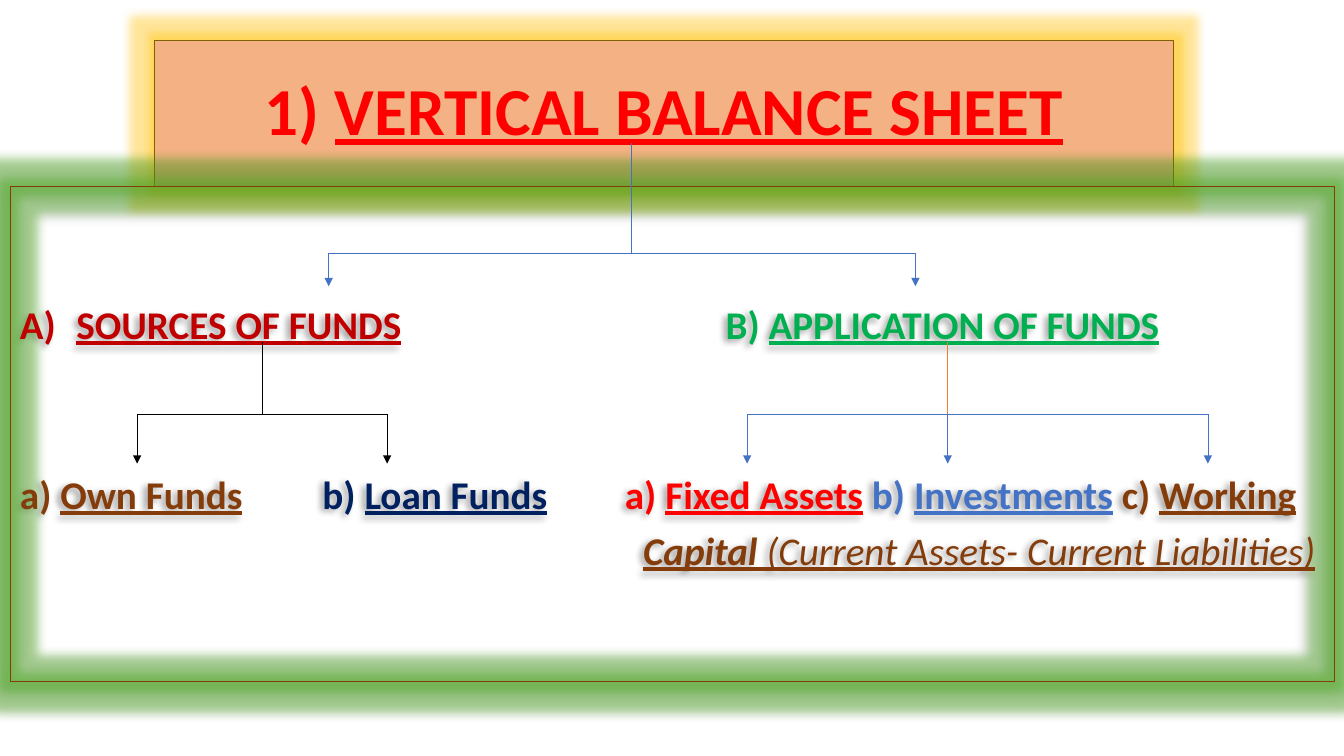
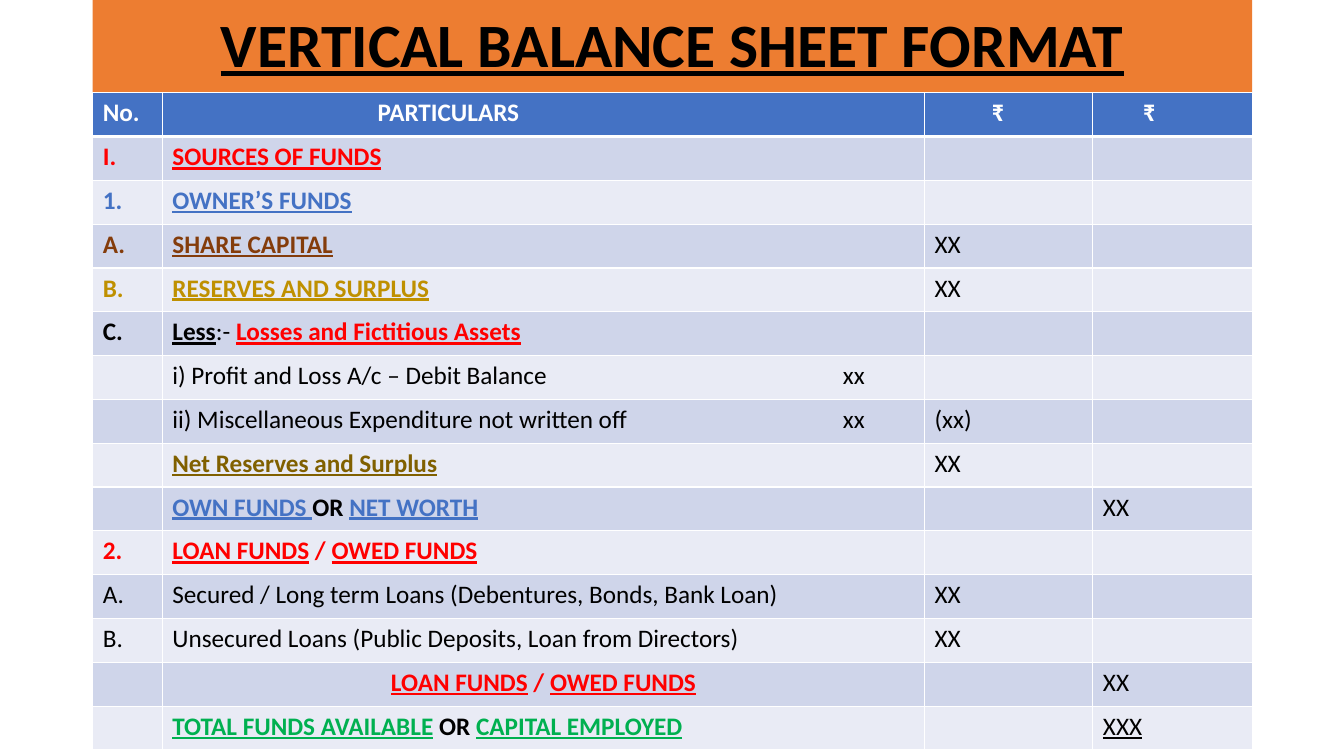
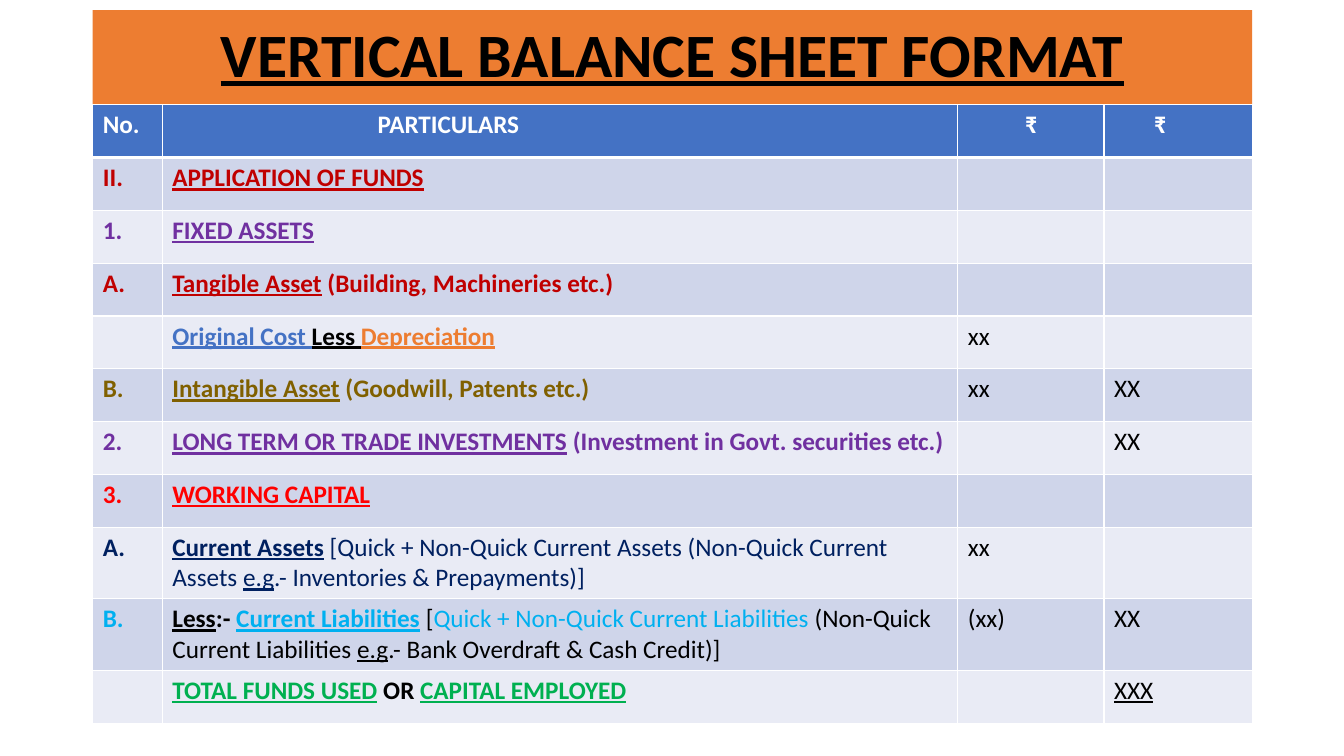
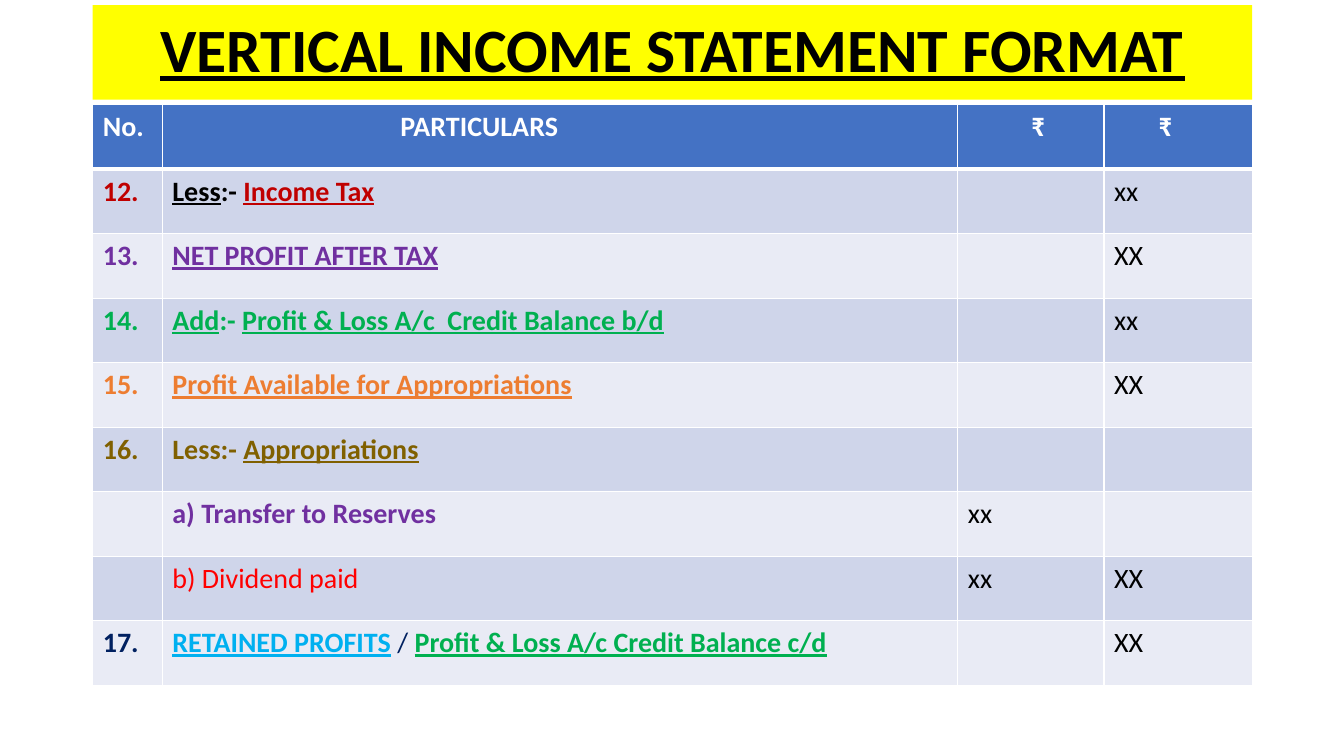
import dataclasses

import lxml.etree
import pptx
import pptx.dml.color
import pptx.enum.shapes
import pptx.enum.text
import pptx.oxml.ns
import pptx.util

EMU_PER_PX = 9144  # 100 px to the inch


@dataclasses.dataclass(frozen=True)
class Theme:
    font: str = "Calibri"
    black: str = "000000"
    white: str = "FFFFFF"
    red: str = "FF0000"
    crimson: str = "C00000"
    green: str = "00B050"
    blue: str = "4472C4"
    sky: str = "00B0F0"
    navy: str = "002060"
    purple: str = "7030A0"
    orange: str = "ED7D31"
    peach: str = "F4B183"
    yellow: str = "FFFF00"
    gold: str = "BF9000"
    olive: str = "806000"
    brown: str = "843C0B"
    yellow_glow: str = "FFC000"
    green_glow: str = "4EB21E"
    bands: tuple = ("CFD5EA", "E9EBF5")
    cover_size: int = 48
    title_size: int = 44
    chart_size: int = 28
    table_size: int = 18
    large_table_size: int = 20
    line_spacing: float = 0.9


THEME = Theme()


@dataclasses.dataclass(frozen=True)
class Span:
    text: str
    colour: str = THEME.black
    bold: bool = False
    underline: bool = False
    italic: bool = False


def strong(text, colour=THEME.black):
    return Span(text, colour, bold=True)


def under(text, colour=THEME.black):
    return Span(text, colour, bold=True, underline=True)


def px(length):
    return pptx.util.Emu(round(length * EMU_PER_PX))


def rgb(colour):
    return pptx.dml.color.RGBColor.from_string(colour)


def add_xml(parent, tag, **attributes):
    element = lxml.etree.SubElement(parent, pptx.oxml.ns.qn(tag))
    for name, value in attributes.items():
        element.set(name, str(value))
    return element


def add_spans(para, spans, size):
    for item in spans:
        span = para.add_run()
        span.text = item.text
        font = span.font
        font.name = THEME.font
        font.size = pptx.util.Pt(size)
        font.bold = item.bold
        font.italic = item.italic
        font.underline = item.underline
        font.color.rgb = rgb(item.colour)


def set_tabs(para, stops):
    tab_list = add_xml(para._p.get_or_add_pPr(), "a:tabLst")
    for stop in stops:
        add_xml(tab_list, "a:tab", pos=px(stop), algn="l")


def add_box(page, left, top, width, height, fill=None, line=None):
    box = page.shapes.add_shape(
        pptx.enum.shapes.MSO_SHAPE.RECTANGLE, px(left), px(top), px(width), px(height))
    box.shadow.inherit = False
    if fill:
        box.fill.solid()
        box.fill.fore_color.rgb = rgb(fill)
    else:
        box.fill.background()
    if line:
        box.line.color.rgb = rgb(line)
        box.line.width = pptx.util.Pt(0.75)
    else:
        box.line.fill.background()
    box.text_frame.word_wrap = True
    return box


def add_effect(box, tag, colour, opacity, **attributes):
    effects = box._element.spPr.find(pptx.oxml.ns.qn("a:effectLst"))
    effect = add_xml(effects, tag, **attributes)
    shade = add_xml(effect, "a:srgbClr", val=colour)
    add_xml(shade, "a:alpha", val=opacity * 1000)


def add_glow(box, colour, radius):
    add_effect(box, "a:glow", colour, 40, rad=pptx.util.Pt(radius))


def add_title(page, place, spans, size, fill, line=None):
    box = add_box(page, *place, fill, line)
    box.text_frame.vertical_anchor = pptx.enum.text.MSO_ANCHOR.MIDDLE
    para = box.text_frame.paragraphs[0]
    para.alignment = pptx.enum.text.PP_ALIGN.CENTER
    para.line_spacing = THEME.line_spacing
    add_spans(para, spans, size)
    return box


def add_banner(page, top, text, fill):
    add_title(page, (92, top, 1150, 94), [under(text)], THEME.title_size, fill)


def add_line(page, start, end, colour, arrow=False):
    line = page.shapes.add_connector(
        pptx.enum.shapes.MSO_CONNECTOR.STRAIGHT, *map(px, start + end))
    line.line.color.rgb = rgb(colour)
    line.line.width = pptx.util.Pt(0.5)
    properties = line._element.spPr
    if arrow:
        add_xml(properties.find(pptx.oxml.ns.qn("a:ln")), "a:tailEnd", type="triangle")
    add_xml(properties, "a:effectLst")


def add_branches(page, stem, top, bar, bottom, drops, colour, stem_colour=None):
    """Draw a stem down to a bar, with an arrow down from the bar at each drop."""
    add_line(page, (stem, top), (stem, bar), stem_colour or colour)
    add_line(page, (drops[0], bar), (drops[-1], bar), colour)
    for drop in drops:
        add_line(page, (drop, bar), (drop, bottom), colour, arrow=True)


def style_cell(cell, fill, top_width, bottom_width):
    properties = cell._tc.get_or_add_tcPr()
    for side, width in (("L", 1), ("R", 1), ("T", top_width), ("B", bottom_width)):
        border = add_xml(properties, f"a:ln{side}", w=pptx.util.Pt(width))
        add_xml(add_xml(border, "a:solidFill"), "a:srgbClr", val=THEME.white)
    cell.fill.solid()
    cell.fill.fore_color.rgb = rgb(fill)


def amount(text):
    """Grand totals, written XXX, are underlined."""
    return [Span(text, underline=text == "XXX")] if text else []


def add_statement(page, top, height, widths, rows, size, centred=(), tab=None):
    """Rows hold a number span or None, the particulars and two amounts."""
    table = page.shapes.add_table(
        len(rows) + 1, len(widths), px(92), px(top), px(sum(widths)), px(height)).table
    for column, width in zip(table.columns, widths):
        column.width = px(width)
    for row in table.rows:
        row.height = px(height) // len(table.rows)

    header_indents = (0, 8.14, 2.26, 1.58)  # in ems
    for column, text in enumerate(("No.", "PARTICULARS", "₹", "₹")):
        cell = table.cell(0, column)
        style_cell(cell, THEME.blue, 1, 3)
        para = cell.text_frame.paragraphs[0]
        indent = pptx.util.Pt(header_indents[column] * size)
        para._p.get_or_add_pPr().set("marL", str(indent))
        add_spans(para, [strong(text, THEME.white)], size)

    for index, (number, particulars, inner, outer) in enumerate(rows, 1):
        contents = ([number] if number else [], particulars, amount(inner), amount(outer))
        for column, spans in enumerate(contents):
            cell = table.cell(index, column)
            style_cell(cell, THEME.bands[(index - 1) % 2], 3 if index == 1 else 1, 1)
            para = cell.text_frame.paragraphs[0]
            if tab and any("\t" in span.text for span in spans):
                set_tabs(para, [tab])
            if column == 1 and index in centred:
                para.alignment = pptx.enum.text.PP_ALIGN.CENTER
            add_spans(para, spans, size)


def build_overview(page):
    t = THEME
    title = add_title(
        page, (153, 40, 1011, 145),
        [strong("1) ", t.red), under("VERTICAL BALANCE SHEET", t.red)],
        t.cover_size, t.peach, t.olive)
    add_glow(title, t.yellow_glow, 11)

    body = add_box(page, 10, 185, 1314, 491, line=t.brown)
    add_glow(body, t.green_glow, 14)
    add_effect(body, "a:outerShdw", t.black, 40, blurRad=pptx.util.Pt(4),
               dist=pptx.util.Pt(3), dir=135 * 60000, algn="tr", rotWithShape=0)
    frame = body.text_frame
    frame.margin_top = px(118)
    frame.vertical_anchor = pptx.enum.text.MSO_ANCHOR.TOP
    lines = [
        (0, [56, 700], [
            strong("A)\t", t.crimson), under("SOURCES OF FUNDS", t.crimson), Span("\t"),
            strong("B) ", t.green), under("APPLICATION OF FUNDS", t.green)]),
        (91, [300, 600], [
            strong("a) ", t.brown), under("Own Funds", t.brown), Span("\t"),
            strong("b) ", t.navy), under("Loan Funds", t.navy), Span("\t"),
            strong("a) ", t.red), under("Fixed Assets", t.red),
            strong(" ", t.red), strong("b) ", t.blue), under("Investments", t.blue),
            strong(" ", t.blue), strong("c) ", t.brown), under("Working", t.brown)]),
        (10, [618], [
            Span("\t"), Span("Capital", t.brown, True, True, True),
            Span(" (Current Assets- Current Liabilities)", t.brown, False, True, True)]),
    ]
    for index, (space, stops, spans) in enumerate(lines):
        para = frame.add_paragraph() if index else frame.paragraphs[0]
        set_tabs(para, stops)
        para.alignment = pptx.enum.text.PP_ALIGN.LEFT
        para.line_spacing = t.line_spacing
        para.space_before = pptx.util.Pt(space)
        add_spans(para, spans, t.chart_size)

    add_branches(page, 626, 142, 251, 284, (326, 908), t.blue)
    add_branches(page, 260, 339, 411, 460, (136, 384), t.black)
    add_branches(page, 940, 339, 411, 460, (741, 940, 1198), t.blue, t.orange)


def build_sources(page):
    t = THEME
    owed = [under("LOAN FUNDS", t.red), strong(" / ", t.red), under("OWED FUNDS", t.red)]
    rows = [
        (strong("I.", t.red), [under("SOURCES OF FUNDS", t.red)], "", ""),
        (strong("1.", t.blue), [under("OWNER’S FUNDS", t.blue)], "", ""),
        (strong("A.", t.brown), [under("SHARE CAPITAL", t.brown)], "XX", ""),
        (strong("B.", t.gold), [under("RESERVES AND SURPLUS", t.gold)], "XX", ""),
        (strong("C."), [under("Less"), Span(":- "),
                        under("Losses and Fictitious Assets", t.red)], "", ""),
        (None, [Span("i) Profit and Loss A/c – Debit Balance\txx")], "", ""),
        (None, [Span("ii) Miscellaneous Expenditure not written off\txx")], "(xx)", ""),
        (None, [under("Net Reserves and Surplus", t.olive)], "XX", ""),
        (None, [under("OWN FUNDS ", t.blue), strong("OR "),
                under("NET WORTH", t.blue)], "", "XX"),
        (strong("2.", t.red), owed, "", ""),
        (Span("A."), [Span("Secured / Long term Loans (Debentures, Bonds, Bank Loan)")],
         "XX", ""),
        (Span("B."), [Span("Unsecured Loans (Public Deposits, Loan from Directors)")],
         "XX", ""),
        (None, owed, "", "XX"),
        (None, [under("TOTAL FUNDS AVAILABLE", t.green), strong(" OR "),
                under("CAPITAL EMPLOYED", t.green)], "", "XXX"),
    ]
    add_banner(page, 0, "VERTICAL BALANCE SHEET FORMAT", t.orange)
    add_statement(page, 92, 652, (69, 756, 167, 158), rows, t.table_size,
                  centred=(13,), tab=665)


def build_applications(page, widths):
    t = THEME
    rows = [
        (strong("II.", t.crimson), [under("APPLICATION OF FUNDS", t.crimson)], "", ""),
        (strong("1.", t.purple), [under("FIXED ASSETS", t.purple)], "", ""),
        (strong("A.", t.crimson), [
            under("Tangible Asset", t.crimson),
            strong(" (Building, Machineries etc.)", t.crimson)], "", ""),
        (None, [under("Original Cost ", t.blue), under("Less "),
                under("Depreciation", t.orange)], "xx", ""),
        (strong("B.", t.olive), [
            under("Intangible Asset", t.olive),
            strong(" (Goodwill, Patents etc.)", t.olive)], "xx", "XX"),
        (strong("2.", t.purple), [
            under("LONG TERM OR TRADE INVESTMENTS", t.purple),
            strong(" (Investment in Govt. securities etc.)", t.purple)], "", "XX"),
        (strong("3.", t.red), [under("WORKING CAPITAL", t.red)], "", ""),
        (strong("A.", t.navy), [
            under("Current Assets", t.navy),
            Span(" [Quick + Non-Quick Current Assets (Non-Quick Current Assets ", t.navy),
            Span("e.g", t.navy, underline=True),
            Span(".- Inventories & Prepayments)]", t.navy)], "xx", ""),
        (strong("B.", t.sky), [
            under("Less"), strong(":- "), under("Current Liabilities", t.sky),
            Span(" ", t.sky), Span("["),
            Span("Quick + Non-Quick Current Liabilities ", t.sky),
            Span("(Non-Quick Current Liabilities "), Span("e.g", underline=True),
            Span(".- Bank Overdraft & Cash Credit)]")], "(xx)", "XX"),
        (None, [under("TOTAL FUNDS USED", t.green), strong(" ", t.green), strong("OR "),
                under("CAPITAL EMPLOYED", t.green)], "", "XXX"),
    ]
    add_banner(page, 10, "VERTICAL BALANCE SHEET FORMAT", t.orange)
    add_statement(page, 104, 576, widths, rows, t.table_size)


def build_income(page, widths):
    t = THEME
    rows = [
        (strong("12.", t.crimson), [
            under("Less"), strong(":- "), under("Income Tax", t.crimson)], "", "xx"),
        (strong("13.", t.purple), [under("NET PROFIT AFTER TAX", t.purple)], "", "XX"),
        (strong("14.", t.green), [
            under("Add", t.green), strong(":- ", t.green),
            under("Profit & Loss A/c  Credit Balance b/d", t.green)], "", "xx"),
        (strong("15.", t.orange), [
            under("Profit Available for Appropriations", t.orange)], "", "XX"),
        (strong("16.", t.olive), [
            strong("Less:- ", t.olive), under("Appropriations", t.olive)], "", ""),
        (None, [strong("a) Transfer to Reserves", t.purple)], "xx", ""),
        (None, [Span("b) Dividend paid", t.red)], "xx", "XX"),
        (strong("17.", t.navy), [
            under("RETAINED PROFITS", t.sky), strong(" ", t.navy), Span("/ ", t.navy),
            under("Profit & Loss A/c Credit Balance c/d", t.green)], "", "XX"),
    ]
    add_banner(page, 5, "VERTICAL INCOME STATEMENT FORMAT", t.yellow)
    add_statement(page, 104, 576, widths, rows, t.large_table_size)


def main():
    deck = pptx.Presentation()
    deck.slide_width, deck.slide_height = px(1333), px(750)
    blank = deck.slide_layouts[6]
    wide_particulars = (69, 789, 145, 147)
    build_overview(deck.slides.add_slide(blank))
    build_sources(deck.slides.add_slide(blank))
    build_applications(deck.slides.add_slide(blank), wide_particulars)
    build_income(deck.slides.add_slide(blank), wide_particulars)
    deck.save("out.pptx")


if __name__ == "__main__":
    main()
